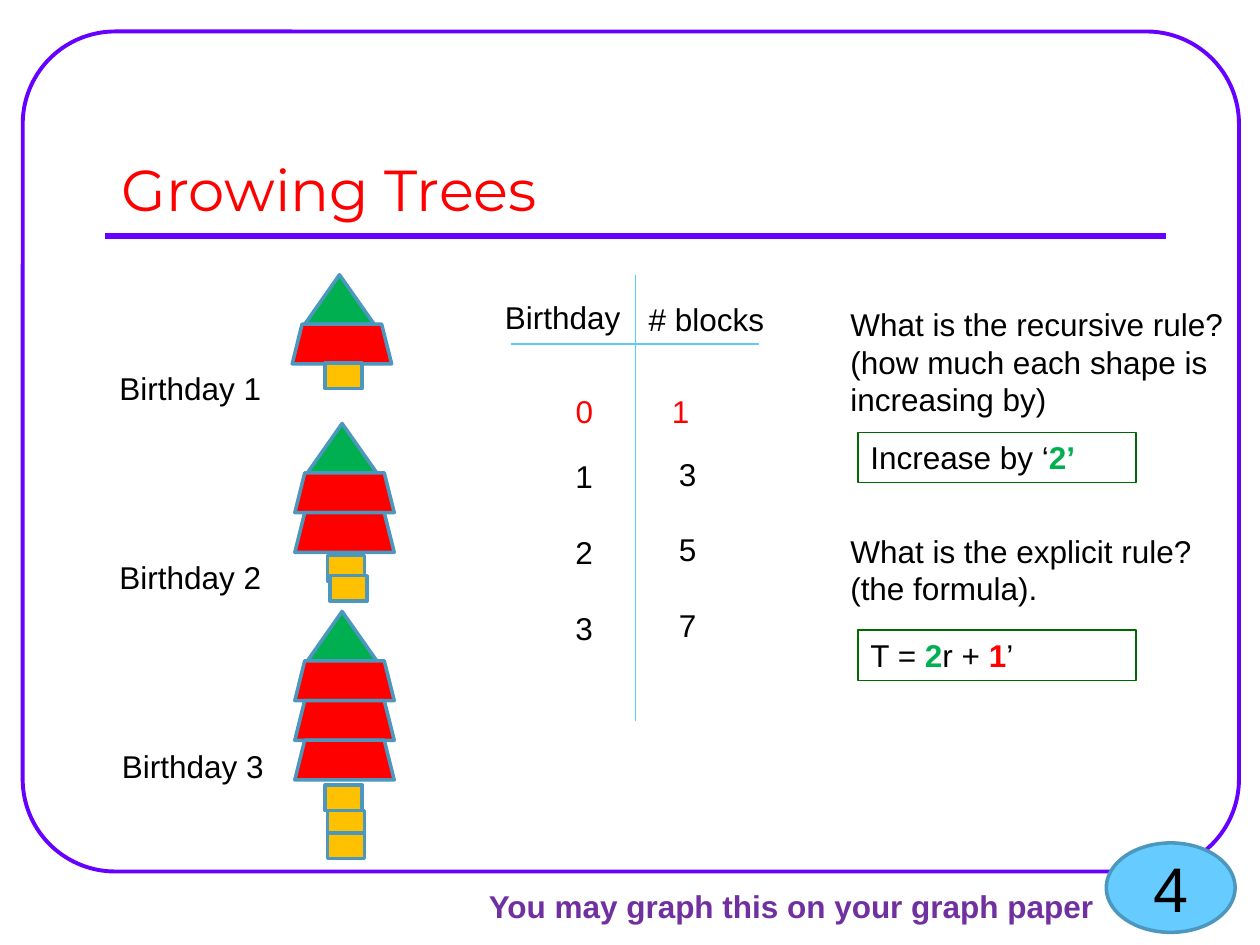
from pptx import Presentation
from pptx.dml.color import RGBColor
from pptx.enum.shapes import MSO_CONNECTOR, MSO_SHAPE
from pptx.enum.text import MSO_ANCHOR, PP_ALIGN
from pptx.oxml.ns import qn
from pptx.util import Pt
from lxml.etree import SubElement

BLACK = RGBColor(0x00, 0x00, 0x00)
RED = RGBColor(0xFF, 0x00, 0x00)
GREEN = RGBColor(0x00, 0xB0, 0x50)
GOLD = RGBColor(0xFF, 0xC0, 0x00)
VIOLET = RGBColor(0x66, 0x00, 0xFF)
PURPLE = RGBColor(0x70, 0x30, 0xA0)
SKY = RGBColor(0x66, 0xCC, 0xFF)
TABLE_BLUE = RGBColor(0x60, 0xC9, 0xFD)
OUTLINE = RGBColor(0x4B, 0x97, 0xBD)
DARK_GREEN = RGBColor(0x00, 0x68, 0x00)
LINE_HEIGHT = 21.6

presentation = Presentation()
presentation.slide_width = Pt(720)
presentation.slide_height = Pt(540)
slide = presentation.slides.add_slide(presentation.slide_layouts[6])


def add_shape(kind, left, top, width, height, fill, line=OUTLINE, weight=2):
    shape = slide.shapes.add_shape(kind, Pt(left), Pt(top), Pt(width), Pt(height))
    shape.shadow.inherit = False
    if fill is None:
        shape.fill.background()
    else:
        shape.fill.solid()
        shape.fill.fore_color.rgb = fill
    shape.line.color.rgb = line
    shape.line.width = Pt(weight)
    SubElement(shape._element.spPr.find(qn("a:ln")), qn("a:round"))
    return shape


def write(shape, paragraphs, size=18, font="Arial", align=PP_ALIGN.LEFT,
          anchor=MSO_ANCHOR.TOP, wrap=False):
    frame = shape.text_frame
    frame.word_wrap = wrap
    frame.vertical_anchor = anchor
    for index, runs in enumerate(paragraphs):
        paragraph = frame.paragraphs[0] if index == 0 else frame.add_paragraph()
        paragraph.alignment = align
        if len(paragraphs) > 1:
            paragraph.line_spacing = Pt(LINE_HEIGHT)
        for text, color, bold in runs:
            run = paragraph.add_run()
            run.text = text
            run.font.size = Pt(size)
            run.font.name = font
            run.font.bold = bold
            run.font.color.rgb = color
    return frame


frame_shape = add_shape(MSO_SHAPE.ROUNDED_RECTANGLE, 13, 18, 695, 480, None, VIOLET, 2.25)
frame_shape.adjustments[0] = 0.11

for x1, y1, x2, y2, color, weight in [
    (60, 134.8, 666, 134.8, VIOLET, 3),
    (363, 157, 363, 412, TABLE_BLUE, 0.75),
    (292.3, 196.5, 433.5, 196.5, TABLE_BLUE, 0.75),
]:
    connector = slide.shapes.add_connector(MSO_CONNECTOR.STRAIGHT, Pt(x1), Pt(y1), Pt(x2), Pt(y2))
    connector.line.color.rgb = color
    connector.line.width = Pt(weight)
    SubElement(connector._element.spPr, qn("a:effectLst"))

title = slide.shapes.add_textbox(Pt(62.6), Pt(77), Pt(284), Pt(54))
write(title, [[("Growing Trees", RED, False)]], 33, "Montserrat", anchor=MSO_ANCHOR.BOTTOM)

for text, left, top, width, color, bold in [
    ("Birthday 1", 61.2, 207.4, 96.5, BLACK, False),
    ("Birthday 2", 61.2, 315.4, 96.5, BLACK, False),
    ("Birthday 3", 62.6, 423.4, 96.5, BLACK, False),
    ("Birthday", 281.5, 167, 81.4, BLACK, False),
    ("# blocks", 363.6, 167.8, 81.4, BLACK, False),
    ("You may graph this on your graph paper", 272.2, 503.3, 363.6, PURPLE, True),
]:
    label = slide.shapes.add_textbox(Pt(left), Pt(top), Pt(width), Pt(28.8))
    write(label, [[(text, color, bold)]])

trees = [
    (167, 157, [(185.8, 207.4)]),
    (168.5, 242, [(187.2, 317.5), (188.6, 329)]),
    (168.5, 349.4, [(185.8, 448.6), (187.2, 463), (187.2, 475.9)]),
]
for left, top, trunk_blocks in trees:
    add_shape(MSO_SHAPE.ISOSCELES_TRIANGLE, left + 7.2, top, 39.6, 28.2, GREEN)
    for level, (trunk_left, trunk_top) in enumerate(trunk_blocks):
        add_shape(MSO_SHAPE.TRAPEZOID, left, top + 28.2 + level * 22.7, 56.8, 22.7, RED)
        add_shape(MSO_SHAPE.RECTANGLE, trunk_left, trunk_top, 21.2, 14.6, GOLD)

for left, top, values in [(321.8, 257.8, "123"), (380.9, 256.3, "357")]:
    column = slide.shapes.add_textbox(Pt(left), Pt(top), Pt(24.5), Pt(116.6))
    frame = write(column, [[(value, BLACK, False)] for value in values])
    for paragraph in frame.paragraphs[:-1]:
        paragraph.space_after = Pt(LINE_HEIGHT)

start_row = slide.shapes.add_textbox(Pt(321.8), Pt(220.3), Pt(94.3), Pt(28.8))
frame = write(start_row, [[("0\t1", RED, False)]], wrap=True)
tab_list = SubElement(frame.paragraphs[0]._p.get_or_add_pPr(), qn("a:tabLst"))
SubElement(tab_list, qn("a:tab"), pos=str(Pt(55)), algn="l")

questions = slide.shapes.add_textbox(Pt(478.8), Pt(170.6), Pt(229.7), Pt(181.4))
frame = write(questions, [[(text, BLACK, False)] for text in [
    "What is the recursive rule?",
    "(how much each shape is",
    "increasing by)",
    "What is the explicit rule?",
    "(the formula).",
]])
frame.paragraphs[2].space_after = Pt(3 * LINE_HEIGHT)

for top, runs in [
    (247, [("Increase by ‘", BLACK, False), ("2’", GREEN, True)]),
    (360, [("T = ", BLACK, False), ("2", GREEN, True), ("r + ", BLACK, False),
           ("1", RED, True), ("’", BLACK, False)]),
]:
    answer = add_shape(MSO_SHAPE.RECTANGLE, 490.3, top, 158.9, 28.8, None, DARK_GREEN, 0.75)
    write(answer, [runs], wrap=True)

number = add_shape(MSO_SHAPE.OVAL, 632.2, 481.7, 73.6, 51.1, SKY)
write(number, [[("4", BLACK, False)]], 36, align=PP_ALIGN.CENTER, anchor=MSO_ANCHOR.MIDDLE, wrap=True)

presentation.save("out.pptx")
